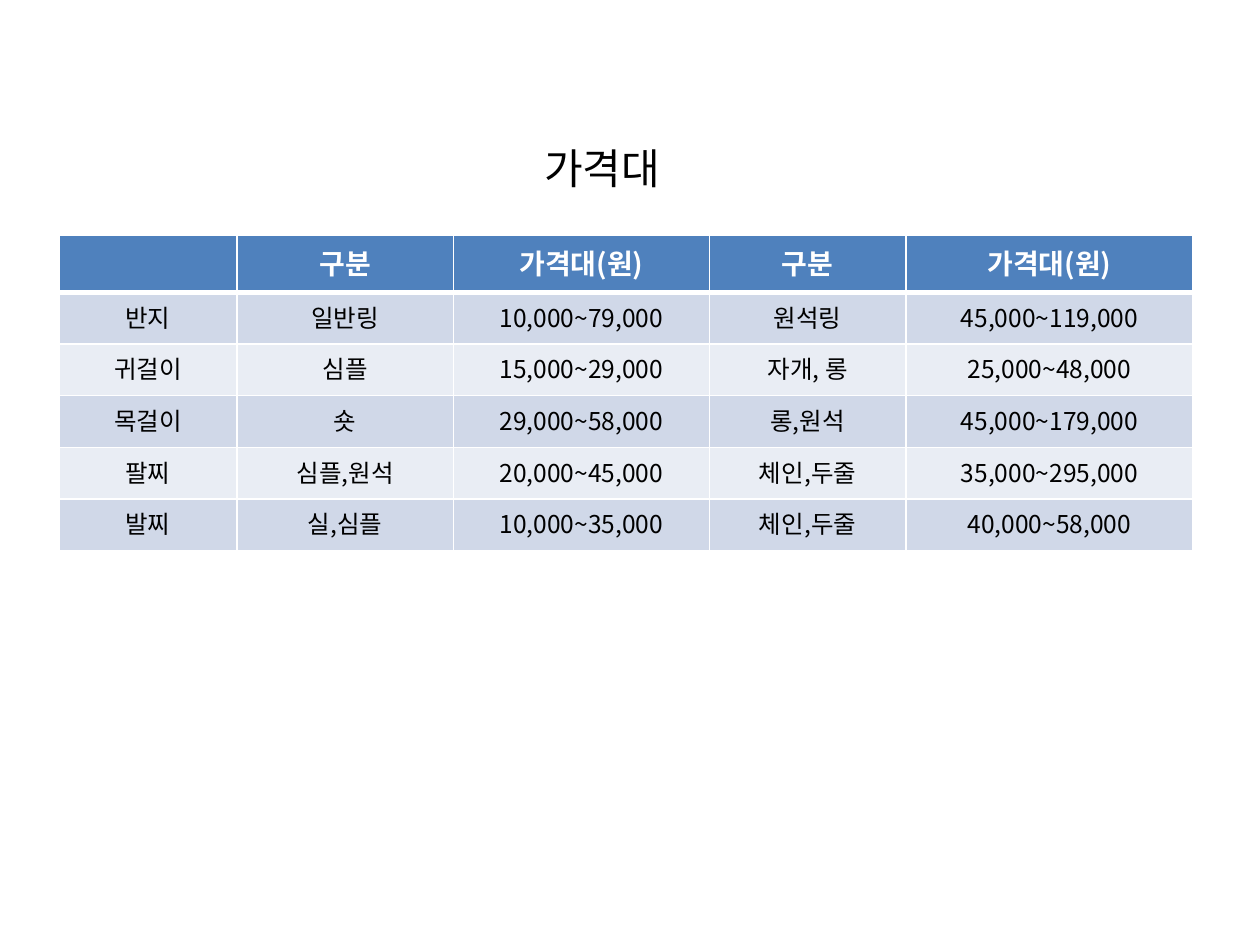
from lxml.etree import SubElement
from pptx import Presentation
from pptx.dml.color import RGBColor
from pptx.enum.text import MSO_ANCHOR, PP_ALIGN
from pptx.oxml.ns import qn
from pptx.util import Inches, Pt

FONT = "Noto Sans CJK KR"
BLACK = RGBColor(0x00, 0x00, 0x00)
WHITE = RGBColor(0xFF, 0xFF, 0xFF)
HEADER_BLUE = RGBColor(0x4F, 0x81, 0xBD)
BANDS = [RGBColor(0xD0, 0xD8, 0xE8), RGBColor(0xE9, 0xED, 0xF4)]

PRICES = [
    ["", "구분", "가격대(원)", "구분", "가격대(원)"],
    ["반지", "일반링", "10,000~79,000", "원석링", "45,000~119,000"],
    ["귀걸이", "심플", "15,000~29,000", "자개, 롱", "25,000~48,000"],
    ["목걸이", "숏", "29,000~58,000", "롱,원석", "45,000~179,000"],
    ["팔찌", "심플,원석", "20,000~45,000", "체인,두줄", "35,000~295,000"],
    ["발찌", "실,심플", "10,000~35,000", "체인,두줄", "40,000~58,000"],
]
COLUMN_WIDTHS = [1.41, 1.72, 2.03, 1.56, 2.28]
HEADER_HEIGHT, ROW_HEIGHT = 0.45, 0.41


def format_text(para, size, color, bold, align):
    para.alignment = align
    for span in para.runs:
        span.font.name = FONT
        span.font.size = Pt(size)
        span.font.bold = bold
        span.font.color.rgb = color
        SubElement(span.font._element, qn("a:ea"), typeface=FONT)


def add_borders(cell, bottom_width):
    properties = cell._tc.get_or_add_tcPr()
    for position, side in enumerate(["lnL", "lnR", "lnT", "lnB"]):
        width = bottom_width if side == "lnB" else 1
        line = properties.makeelement(qn(f"a:{side}"), {"w": str(Pt(width))})
        fill = SubElement(line, qn("a:solidFill"))
        SubElement(fill, qn("a:srgbClr"), val=str(WHITE))
        properties.insert(position, line)


deck = Presentation()
deck.slide_width, deck.slide_height = Inches(10), Inches(7.5)
page = deck.slides.add_slide(deck.slide_layouts[5])

title = page.shapes.title
title.left, title.top = Inches(4.22), Inches(0.78)
title.width, title.height = Inches(2.39), Inches(1.11)
title.text_frame.text = "가격대"
title.text_frame.vertical_anchor = MSO_ANCHOR.MIDDLE
format_text(title.text_frame.paragraphs[0], 24, BLACK, False, PP_ALIGN.LEFT)

table_height = HEADER_HEIGHT + ROW_HEIGHT * (len(PRICES) - 1)
table = page.shapes.add_table(
    len(PRICES), len(COLUMN_WIDTHS), Inches(0.47), Inches(1.87),
    Inches(sum(COLUMN_WIDTHS)), Inches(table_height),
).table
for column, width in zip(table.columns, COLUMN_WIDTHS):
    column.width = Inches(width)

for row_index, texts in enumerate(PRICES):
    header = row_index == 0
    table.rows[row_index].height = Inches(HEADER_HEIGHT if header else ROW_HEIGHT)
    for column_index, text in enumerate(texts):
        cell = table.cell(row_index, column_index)
        cell.text_frame.text = text
        cell.fill.solid()
        cell.fill.fore_color.rgb = HEADER_BLUE if header else BANDS[(row_index - 1) % 2]
        add_borders(cell, 3 if header else 1)
        format_text(cell.text_frame.paragraphs[0], 16 if header else 14,
                    WHITE if header else BLACK, header, PP_ALIGN.CENTER)

deck.save("out.pptx")
